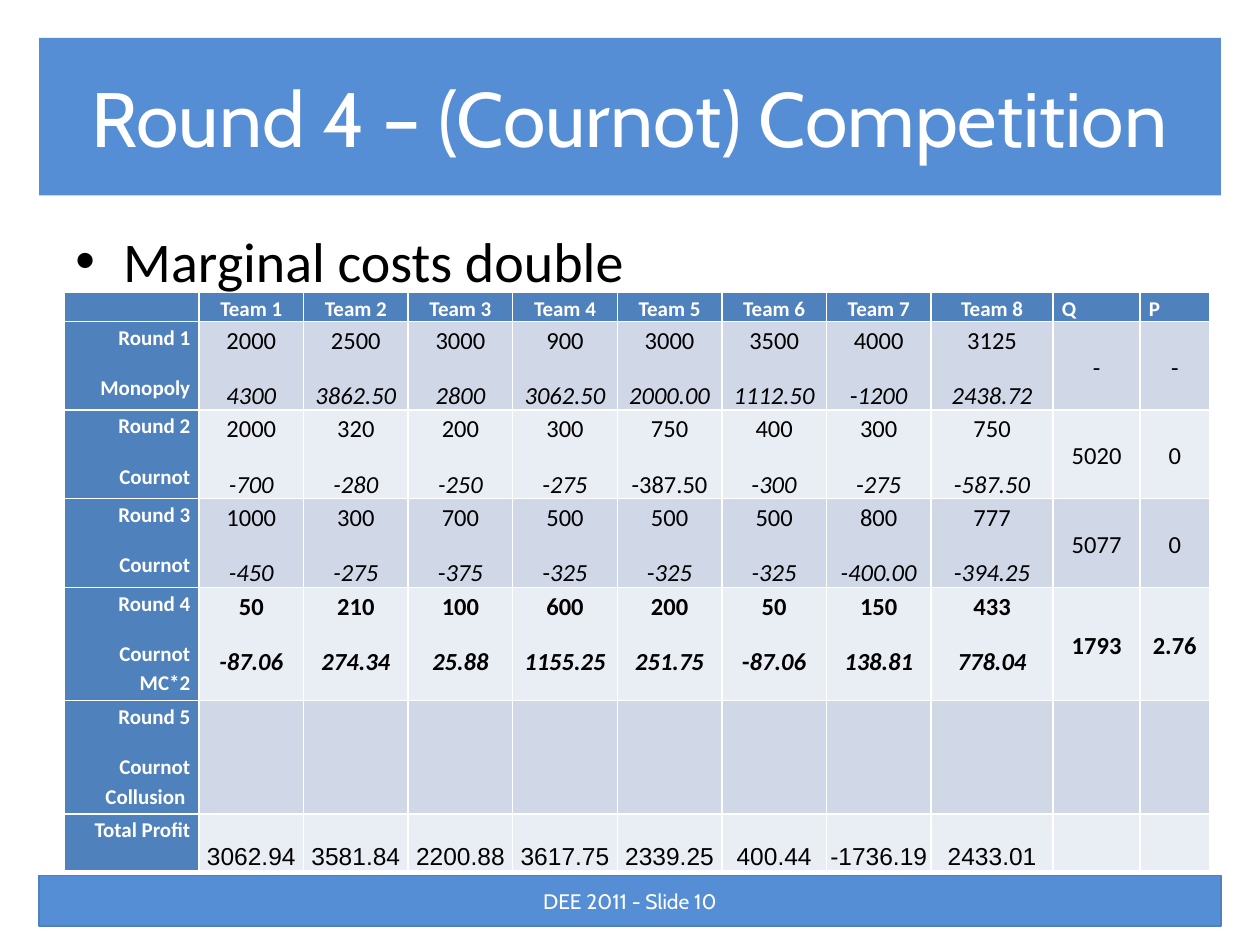
from lxml.etree import SubElement
from pptx import Presentation
from pptx.dml.color import RGBColor as RGB
from pptx.enum.shapes import MSO_SHAPE as Kind
from pptx.enum.text import MSO_ANCHOR as Anchor, PP_ALIGN as Align
from pptx.oxml.ns import qn
from pptx.util import Inches, Pt

HEX = {"band": "558ED5", "head": "4F81BD", "odd": "D0D8E8",
       "even": "E9EDF4", "white": "FFFFFF", "black": "000000"}
TITLE = "Round 4 – (Cournot) Competition"
POINT = "Marginal costs double"
FOOT = "DEE 2011 - Slide 10"

HEADS = [f"Team {n}" for n in range(1, 9)] + ["Q", "P"]
# Round, rule, quantities, profits, market totals.
# In a profit, the part before "|" is upright and the rest is italic.
ROUNDS = [
    ("Round 1", "Monopoly",
     ["2000", "2500", "3000", "900", "3000", "3500", "4000", "3125"],
     ["4300", "3862.50", "2800", "3062.50", "2000.00", "1112.50", "-|1200", "2438.72"],
     ["-", "-"]),
    ("Round 2", "Cournot",
     ["2000", "320", "200", "300", "750", "400", "300", "750"],
     ["-700", "-280", "-250", "-|275", "-387.50|", "-|300", "-|275", "-|587.50"],
     ["5020", "0"]),
    ("Round 3", "Cournot",
     ["1000", "300", "700", "500", "500", "500", "800", "777"],
     ["-450", "-275", "-|375", "-|325", "-|325", "-325", "-400.00", "-|394.25"],
     ["5077", "0"]),
    ("Round 4", "Cournot MC*2",
     ["50", "210", "100", "600", "200", "50", "150", "433"],
     ["-87.06", "274.34", "25.88", "1155.25", "251.75", "-|87.06", "138.81", "778.04"],
     ["1793", "2.76"]),
    ("Round 5", "Cournot Collusion ", [], [], []),
]
TOTALS = ["3062.94", "3581.84", "2200.88", "3617.75",
          "2339.25", "400.44", "-1736.19", "2433.01"]
BOLD_ROW = 4
COLS = [1.07] + [0.83] * 7 + [0.97, 0.69, 0.55]
ROWS = [0.22, 0.67, 0.67, 0.67, 0.9, 0.9, 0.45]


def put(frame, *lines, size=12, font="Calibri", color="white", bold=False,
        align=Align.CENTER, lead=None, before=0, after=0):
    """Write one paragraph per line; a line is a string or (text, italic) runs."""
    for n, line in enumerate(lines):
        para = frame.paragraphs[0] if n == 0 else frame.add_paragraph()
        para.alignment = align
        para.space_before, para.space_after = Pt(before), Pt(after)
        if lead:
            para.line_spacing = lead
        for text, slant in [(line, False)] if isinstance(line, str) else line:
            run = para.add_run()
            run.text = text
            face = run.font
            face.name, face.size = font, Pt(size)
            face.bold, face.italic = bold, slant
            face.color.rgb = RGB.from_string(HEX[color])


def paint(thing, color):
    thing.fill.solid()
    thing.fill.fore_color.rgb = RGB.from_string(HEX[color])


def band(slide, text, top, height, size, edge=None):
    """Add a full-width coloured bar with centred text."""
    bar = slide.shapes.add_shape(Kind.RECTANGLE, Inches(0.31), Inches(top),
                                 Inches(9.38), Inches(height))
    bar.shadow.inherit = False
    paint(bar, "band")
    if edge:
        bar.line.color.rgb = RGB.from_string(HEX[edge])
        bar.line.width = Pt(0.75)
    else:
        bar.line.fill.background()
    frame = bar.text_frame
    frame.word_wrap, frame.vertical_anchor = True, Anchor.MIDDLE
    put(frame, text, size=size, font="Cabin")


def bullet(slide):
    box = slide.shapes.add_textbox(Inches(0.5), Inches(1.75), Inches(9), Inches(4.95))
    box.text_frame.word_wrap = True
    put(box.text_frame, POINT, size=32, color="black", align=Align.LEFT, before=6.4)
    props = box.text_frame.paragraphs[0]._p.get_or_add_pPr()
    props.set("marL", str(Inches(0.38)))
    props.set("indent", str(-Inches(0.38)))
    SubElement(props, qn("a:buFont"), typeface="Arial")
    SubElement(props, qn("a:buChar"), char="•")


def slant(text):
    """Split a profit into upright and italic runs."""
    up, mark, rest = text.rpartition("|")
    return [run for run in ((up, False), (rest, True)) if run[0]]


def fill_cell(cell, *lines, anchor=Anchor.TOP, side=0.07, top=0, **form):
    cell.margin_left = cell.margin_right = Inches(side)
    cell.margin_top, cell.margin_bottom = Inches(top), 0
    cell.vertical_anchor = anchor
    put(cell.text_frame, *lines, **form)


def results(slide):
    grid = slide.shapes.add_table(len(ROWS), len(COLS), Inches(0.51), Inches(2.32),
                                  Inches(sum(COLS)), Inches(sum(ROWS))).table
    for col, width in zip(grid.columns, COLS):
        col.width = Inches(width)
    for row, height in zip(grid.rows, ROWS):
        row.height = Inches(height)
    for r in range(len(ROWS)):
        for c in range(len(COLS)):
            shade = "head" if r == 0 or c == 0 else "odd" if r % 2 else "even"
            paint(grid.cell(r, c), shade)

    gaps = dict(lead=1.15, before=6, after=6)
    label = dict(gaps, bold=True)
    corner = grid.cell(0, 0)
    corner.margin_top = corner.margin_bottom = 0
    SubElement(corner.text_frame.paragraphs[0]._p, qn("a:endParaRPr"), sz="1200")
    for c, head in enumerate(HEADS, 1):
        side = Align.CENTER if head.startswith("Team") else Align.LEFT
        fill_cell(grid.cell(0, c), head, align=side, **label)

    for r, (name, rule, amounts, profits, market) in enumerate(ROUNDS, 1):
        fill_cell(grid.cell(r, 0), name, rule, align=Align.RIGHT, **label)
        form = dict(gaps, size=14, color="black", bold=r == BOLD_ROW)
        for c, (amount, profit) in enumerate(zip(amounts, profits), 1):
            fill_cell(grid.cell(r, c), amount, slant(profit), **form)
        for c, value in enumerate(market, 9):
            fill_cell(grid.cell(r, c), value, anchor=Anchor.MIDDLE, **form)

    last = len(ROWS) - 1
    fill_cell(grid.cell(last, 0), "Total Profit", align=Align.RIGHT, **label)
    for c, total in enumerate(TOTALS, 1):
        fill_cell(grid.cell(last, c), total, anchor=Anchor.BOTTOM, side=0.01, top=0.01,
                  size=14, font="Arial", color="black")


def main():
    deck = Presentation()
    deck.slide_width, deck.slide_height = Inches(10), Inches(7.5)
    slide = deck.slides.add_slide(deck.slide_layouts[6])
    band(slide, TITLE, 0.3, 1.25, 44)
    bullet(slide)
    band(slide, FOOT, 6.95, 0.4, 12, edge="head")
    results(slide)
    deck.save("out.pptx")


if __name__ == "__main__":
    main()
